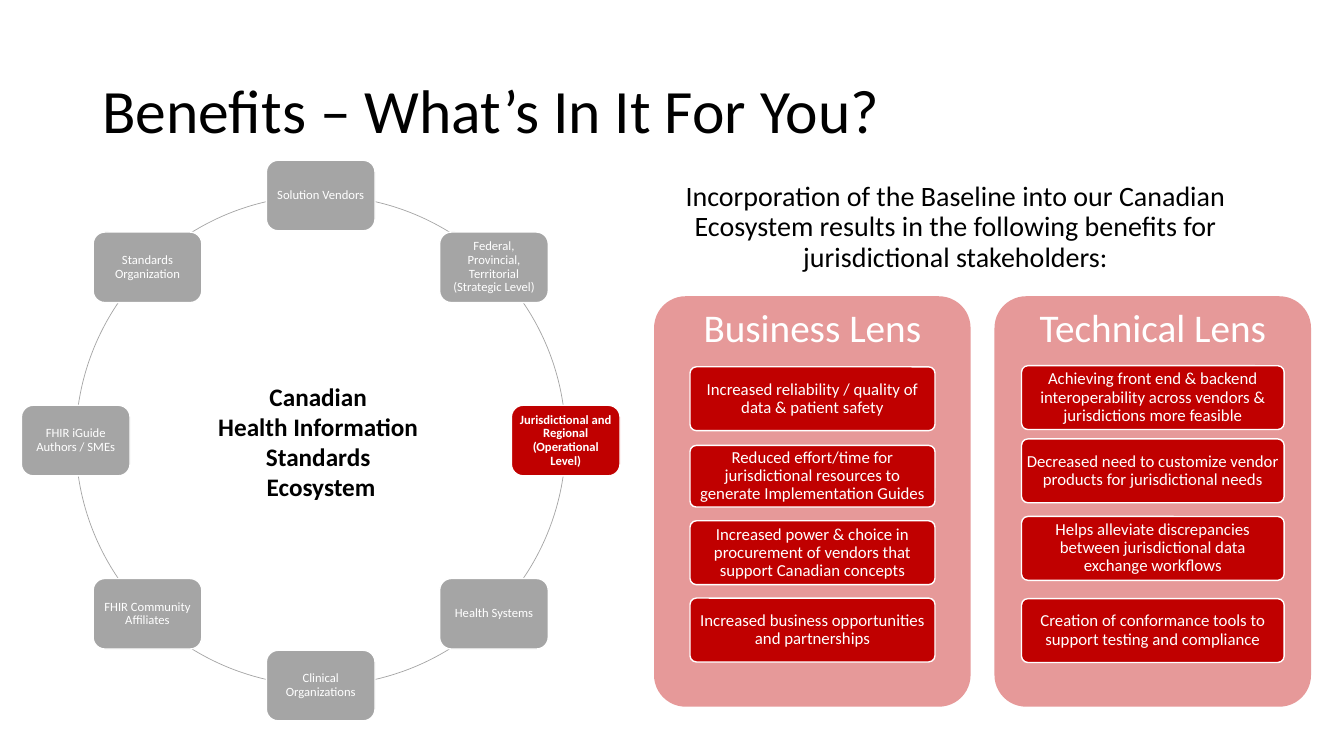
from math import cos, radians, sin

from pptx import Presentation
from pptx.dml.color import RGBColor
from pptx.enum.shapes import MSO_SHAPE
from pptx.enum.text import MSO_ANCHOR, MSO_AUTO_SIZE, PP_ALIGN
from pptx.util import Pt

ROUNDED, OVAL = MSO_SHAPE.ROUNDED_RECTANGLE, MSO_SHAPE.OVAL
TOP, MIDDLE = MSO_ANCHOR.TOP, MSO_ANCHOR.MIDDLE
LEFT, CENTER = PP_ALIGN.LEFT, PP_ALIGN.CENTER
NO_FIT = MSO_AUTO_SIZE.NONE

BLACK, WHITE, GREY, RED, PINK = "000000", "FFFFFF", "A5A5A5", "C00000", "E69999"
TITLE_ONLY = 5


def write(box, text, size, color, bold=False, align=CENTER, anchor=MIDDLE, inset=(7.2, 3.6), spacing=0.9):
    """Put text in a box; inset is the (side, top and bottom) margin."""
    frame = box.text_frame
    frame.text = text
    frame.word_wrap = True
    frame.auto_size = NO_FIT
    frame.vertical_anchor = anchor
    frame.margin_left = frame.margin_right = Pt(inset[0])
    frame.margin_top = frame.margin_bottom = Pt(inset[1])
    for para in frame.paragraphs:
        para.alignment = align
        para.line_spacing = spacing
        for span in para.runs:
            span.font.name = "Calibri"
            span.font.size = Pt(size)
            span.font.bold = bold
            span.font.color.rgb = RGBColor.from_string(color)


def add_rounded(left, top, width, height, fill, line=None, corner=0.1):
    box = page.shapes.add_shape(ROUNDED, Pt(left), Pt(top), Pt(width), Pt(height))
    box.shadow.inherit = False
    box.adjustments[0] = corner
    box.fill.solid()
    box.fill.fore_color.rgb = RGBColor.from_string(fill)
    if line:
        box.line.color.rgb = RGBColor.from_string(line)
        box.line.width = Pt(1)
    else:
        box.line.fill.background()
    return box


deck = Presentation()
deck.slide_width, deck.slide_height = Pt(960), Pt(540)
page = deck.slides.add_slide(deck.slide_layouts[TITLE_ONLY])

title = page.shapes.title
title.left, title.top, title.width, title.height = Pt(66), Pt(28.75), Pt(828), Pt(104.4)
write(title, "Benefits – What’s In It For You?", 44, BLACK, align=LEFT)

# Lens panels: heading, panel left, benefit left, benefit width, (top, text) per benefit
lenses = [
    ("Business Lens", 467.2, 492.9, 175, [
        (262, "Increased reliability / quality of data & patient safety"),
        (318.2, "Reduced effort/time for jurisdictional resources to generate Implementation Guides"),
        (372, "Increased power & choice in procurement of vendors that support Canadian concepts"),
        (427.2, "Increased business opportunities and partnerships"),
    ]),
    ("Technical Lens", 710.4, 729.7, 187.6, [
        (261.2, "Achieving front end & backend interoperability across vendors & jurisdictions more feasible"),
        (313.5, "Decreased need to customize vendor products for jurisdictional needs"),
        (368.9, "Helps alleviate discrepancies between jurisdictional data exchange workflows"),
        (427.6, "Creation of conformance tools to support testing and compliance"),
    ]),
]
for heading, panel_left, benefit_left, benefit_width, benefits in lenses:
    panel = add_rounded(panel_left, 211.6, 226.1, 293.2, PINK)
    write(panel, heading, 28, WHITE, anchor=TOP, inset=(2, 2))
    for top, text in benefits:
        height = 44 if text.startswith("Reduced") else 45.6
        benefit = add_rounded(benefit_left, top, benefit_width, height, RED, WHITE)
        write(benefit, text, 12, WHITE, inset=(2.3, 1.6))

# Ecosystem ring, clockwise from the top
center_x, center_y, radius = 229.1, 314.7, 175
member_width, member_height = 77.6, 50.4
ring = page.shapes.add_shape(
    OVAL, Pt(center_x - radius), Pt(center_y - radius), Pt(2 * radius), Pt(2 * radius))
ring.shadow.inherit = False
ring.fill.background()
ring.line.color.rgb = RGBColor.from_string(GREY)
ring.line.width = Pt(0.5)

members = [
    "Solution Vendors",
    "Federal, Provincial, Territorial (Strategic Level)",
    "Jurisdictional and Regional (Operational Level)",
    "Health Systems",
    "Clinical Organizations",
    "FHIR Community Affiliates",
    "FHIR iGuide Authors / SMEs",
    "Standards Organization",
]
for index, name in enumerate(members):
    angle = radians(360 / len(members) * index)
    left = center_x + radius * sin(angle) - member_width / 2
    top = center_y - radius * cos(angle) - member_height / 2
    focus = name.startswith("Jurisdictional")
    member = add_rounded(left, top, member_width, member_height, RED if focus else GREY, WHITE, 0.167)
    write(member, name, 9, WHITE, bold=focus, inset=(2.9, 2.9))

hub = page.shapes.add_textbox(Pt(108.7), Pt(268.6), Pt(241.2), Pt(94.3))
write(hub, "Canadian \nHealth Information \nStandards \nEcosystem", 18, BLACK, bold=True, anchor=TOP, spacing=1)

intro = page.shapes.add_textbox(Pt(447.8), Pt(136.8), Pt(469.4), Pt(51.8))
write(intro, "Incorporation of the Baseline into our Canadian Ecosystem results in the following "
      "benefits for jurisdictional stakeholders:", 20, BLACK, inset=(10.8, 10.8))

deck.save("out.pptx")
